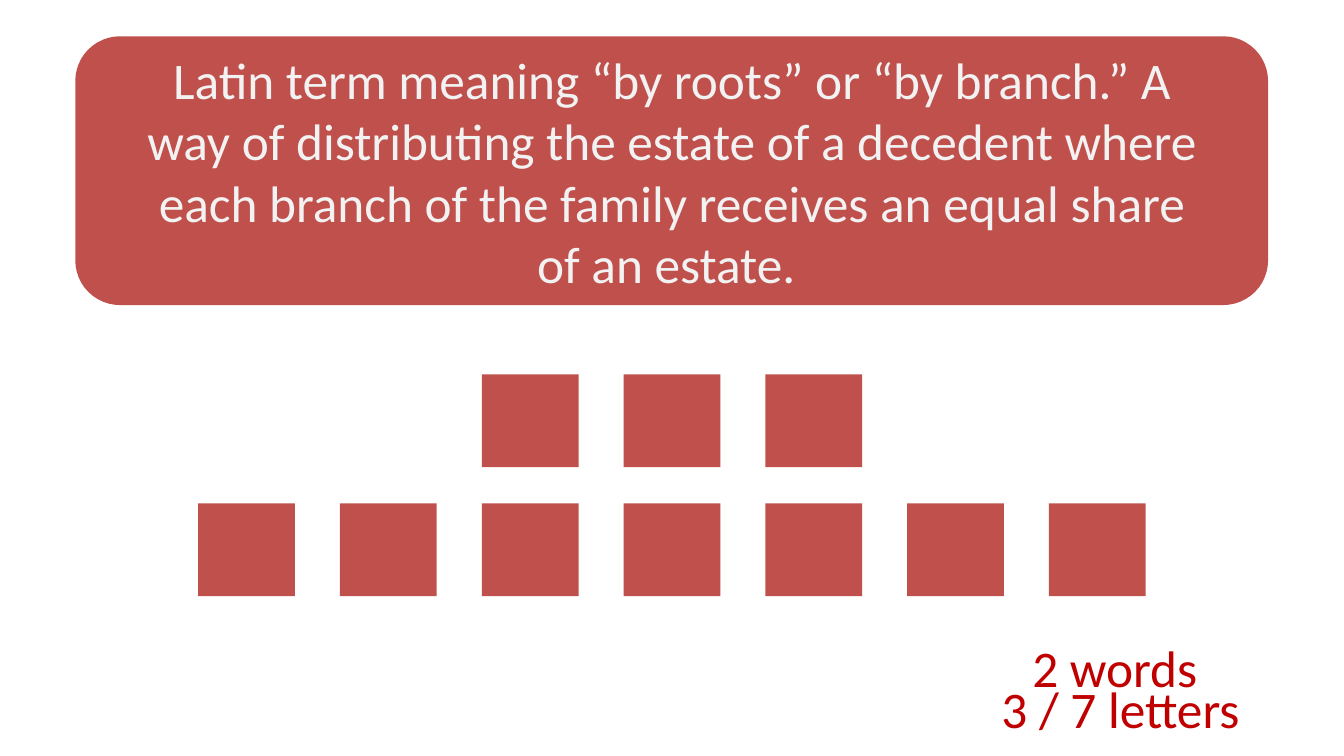
"""Build a word-guessing slide with a clue, letter tiles and a hint."""
from pptx import Presentation
from pptx.dml.color import RGBColor
from pptx.enum.shapes import MSO_SHAPE
from pptx.enum.text import MSO_ANCHOR, PP_ALIGN
from pptx.util import Inches, Pt

RED = "C0504C"
SLIDE_WIDTH = 20
TILE_WIDTH, TILE_HEIGHT, TILE_PITCH = 1.44, 1.38, 2.11


def add_block(slide, preset, left, top, width, height):
    block = slide.shapes.add_shape(
        preset, Inches(left), Inches(top), Inches(width), Inches(height))
    block.shadow.inherit = False
    block.fill.solid()
    block.fill.fore_color.rgb = RGBColor.from_string(RED)
    block.line.fill.background()


def add_text(slide, box, lines, color, spacing=None):
    frame = slide.shapes.add_textbox(*map(Inches, box)).text_frame
    settings = {"word_wrap": True, "vertical_anchor": MSO_ANCHOR.TOP,
                "margin_left": 0, "margin_top": 0,
                "margin_right": 0, "margin_bottom": 0}
    for name, value in settings.items():
        setattr(frame, name, value)
    frame.text = "\n".join(lines)
    for paragraph in frame.paragraphs:
        paragraph.alignment = PP_ALIGN.CENTER
        paragraph.line_spacing = spacing
        font = paragraph.runs[0].font
        font.name, font.size = "Calibri", Pt(55)
        font.color.rgb = RGBColor.from_string(color)


deck = Presentation()
deck.slide_width, deck.slide_height = Inches(SLIDE_WIDTH), Inches(11.25)
slide = deck.slides.add_slide(deck.slide_layouts[6])

add_block(slide, MSO_SHAPE.ROUNDED_RECTANGLE, 1.12, 0.54, 17.75, 4)
clue = ("Latin term meaning “by roots” or “by branch.” A way of distributing "
        "the estate of a decedent where each branch of the family receives "
        "an equal share of an estate. ")
add_text(slide, (2.04, 0.71, 15.92, 4.3), [clue], "F2F2F2")

for letters, top in ((3, 5.57), (7, 7.49)):
    first_left = (SLIDE_WIDTH - TILE_WIDTH - (letters - 1) * TILE_PITCH) / 2
    for position in range(letters):
        add_block(slide, MSO_SHAPE.RECTANGLE, first_left + position * TILE_PITCH,
                  top, TILE_WIDTH, TILE_HEIGHT)

add_text(slide, (14.25, 9.76, 4.85, 1.31), ["2 words ", "3 / 7 letters"],
         "C00000", Pt(44.5))

deck.save("out.pptx")
